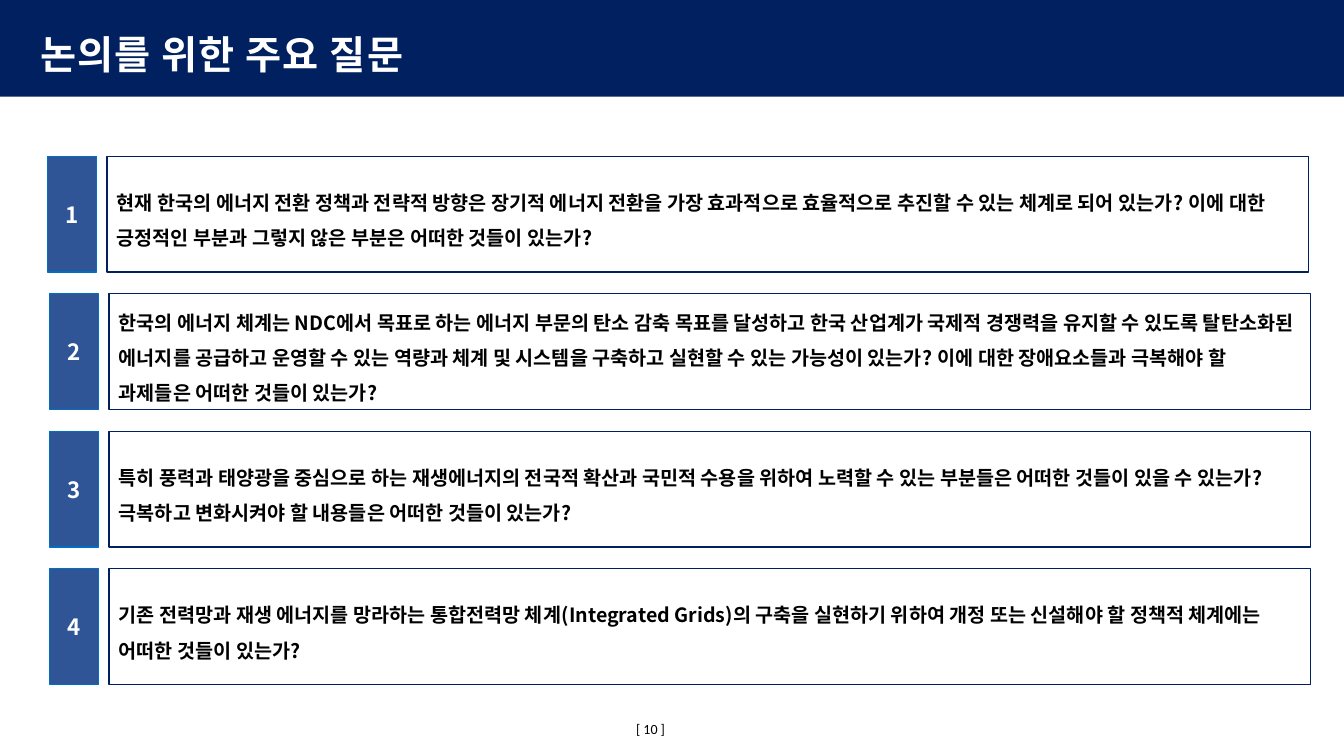
from lxml import etree
from pptx import Presentation
from pptx.dml.color import RGBColor
from pptx.enum.shapes import MSO_SHAPE
from pptx.enum.text import MSO_ANCHOR, MSO_AUTO_SIZE, PP_ALIGN
from pptx.oxml.ns import qn
from pptx.util import Inches, Pt

TITLE = "논의를 위한 주요 질문"
QUESTIONS = [
    "현재 한국의 에너지 전환 정책과 전략적 방향은 장기적 에너지 전환을 가장 효과적으로 "
    "효율적으로 추진할 수 있는 체계로 되어 있는가? 이에 대한 긍정적인 부분과 그렇지 않은 "
    "부분은 어떠한 것들이 있는가?",
    "한국의 에너지 체계는 NDC에서 목표로 하는 에너지 부문의 탄소 감축 목표를 달성하고 "
    "한국 산업계가 국제적 경쟁력을 유지할 수 있도록 탈탄소화된 에너지를 공급하고 운영할 수 "
    "있는 역량과 체계 및 시스템을 구축하고 실현할 수 있는 가능성이 있는가? 이에 대한 "
    "장애요소들과 극복해야 할 과제들은 어떠한 것들이 있는가?",
    "특히 풍력과 태양광을 중심으로 하는 재생에너지의 전국적 확산과 국민적 수용을 위하여 "
    "노력할 수 있는 부분들은 어떠한 것들이 있을 수 있는가? 극복하고 변화시켜야 할 내용들은 "
    "어떠한 것들이 있는가?",
    "기존 전력망과 재생 에너지를 망라하는 통합전력망 체계(Integrated Grids)의 구축을 "
    "실현하기 위하여 개정 또는 신설해야 할 정책적 체계에는 어떠한 것들이 있는가?",
]
PAGE_NUMBER = "[ 10 ]"

NAVY = RGBColor(0x00, 0x20, 0x60)
BLUE = RGBColor(0x2F, 0x55, 0x97)
BRIGHT_BLUE = RGBColor(0x00, 0x70, 0xC0)
WHITE = RGBColor(0xFF, 0xFF, 0xFF)
BLACK = RGBColor(0x00, 0x00, 0x00)
KOREAN_FONT = "Noto Sans CJK KR"
PAGE_FONT = "Calibri"
RECTANGLE = MSO_SHAPE.RECTANGLE
LEFT, CENTER = PP_ALIGN.LEFT, PP_ALIGN.CENTER
TOP, MIDDLE = MSO_ANCHOR.TOP, MSO_ANCHOR.MIDDLE

SLIDE_WIDTH, SLIDE_HEIGHT = 13.33, 7.5
FIRST_TOP, ROW_PITCH, ROW_HEIGHT = 1.55, 1.364, 1.15
NUMBER_LEFT, NUMBER_WIDTH = 0.49, 0.49
QUESTION_LEFT, QUESTION_WIDTH = 1.08, 11.92
FIRST_ROW_SHIFT = -0.02


def add_box(slide, left, top, width, height, fill, line=None):
    box = slide.shapes.add_shape(
        RECTANGLE, Inches(left), Inches(top), Inches(width), Inches(height))
    box.shadow.inherit = False
    box.fill.solid()
    box.fill.fore_color.rgb = fill
    if line is None:
        box.line.fill.background()
    else:
        box.line.color.rgb = line
        box.line.width = Pt(1)
    return box


def write(shape, text, size, color, align=LEFT, anchor=MIDDLE, spacing=1.0,
          font=KOREAN_FONT, bold=True):
    """Put one run in the shape and return its paragraph and run."""
    frame = shape.text_frame
    frame.word_wrap = True
    frame.vertical_anchor = anchor
    paragraph = frame.paragraphs[0]
    paragraph.alignment = align
    paragraph.line_spacing = spacing
    run = paragraph.add_run()
    run.text = text
    run.font.size = Pt(size)
    run.font.bold = bold
    run.font.color.rgb = color
    run.font.name = font
    east_asian = etree.SubElement(run.font._element, qn("a:ea"))
    east_asian.set("typeface", font)
    return paragraph, run


def add_title(slide):
    band = add_box(slide, 0, 0, SLIDE_WIDTH, 0.96, NAVY)
    title = slide.shapes.title
    band.element.addnext(title.element)
    title.left, title.top = Inches(0.3), Inches(0.18)
    title.width, title.height = Inches(12.06), Inches(0.59)
    paragraph, run = write(title, TITLE, 28, WHITE, anchor=TOP, spacing=1.15)
    title.text_frame.auto_size = MSO_AUTO_SIZE.NONE
    paragraph.space_before = Pt(5)
    run.font._element.set("spc", "80")


def add_questions(slide):
    for index, question in enumerate(QUESTIONS):
        top = FIRST_TOP + index * ROW_PITCH
        shift = FIRST_ROW_SHIFT if index == 0 else 0
        question_box = add_box(slide, QUESTION_LEFT + shift, top,
                               QUESTION_WIDTH, ROW_HEIGHT, WHITE, NAVY)
        write(question_box, question, 14, BLACK, spacing=1.5)
        number_box = add_box(slide, NUMBER_LEFT + shift, top,
                             NUMBER_WIDTH, ROW_HEIGHT, BLUE, BRIGHT_BLUE)
        write(number_box, str(index + 1), 16, WHITE, CENTER)


def add_page_number(slide):
    page_box = slide.shapes.add_textbox(
        Inches(6.21), Inches(7.1), Inches(0.52), Inches(0.27))
    write(page_box, PAGE_NUMBER, 10, BLACK, anchor=TOP, font=PAGE_FONT, bold=False)
    page_box.text_frame.word_wrap = False


def main():
    deck = Presentation()
    deck.slide_width, deck.slide_height = Inches(SLIDE_WIDTH), Inches(SLIDE_HEIGHT)
    slide = deck.slides.add_slide(deck.slide_layouts.get_by_name("Title Only"))
    add_title(slide)
    add_questions(slide)
    add_page_number(slide)
    deck.save("out.pptx")


if __name__ == "__main__":
    main()
